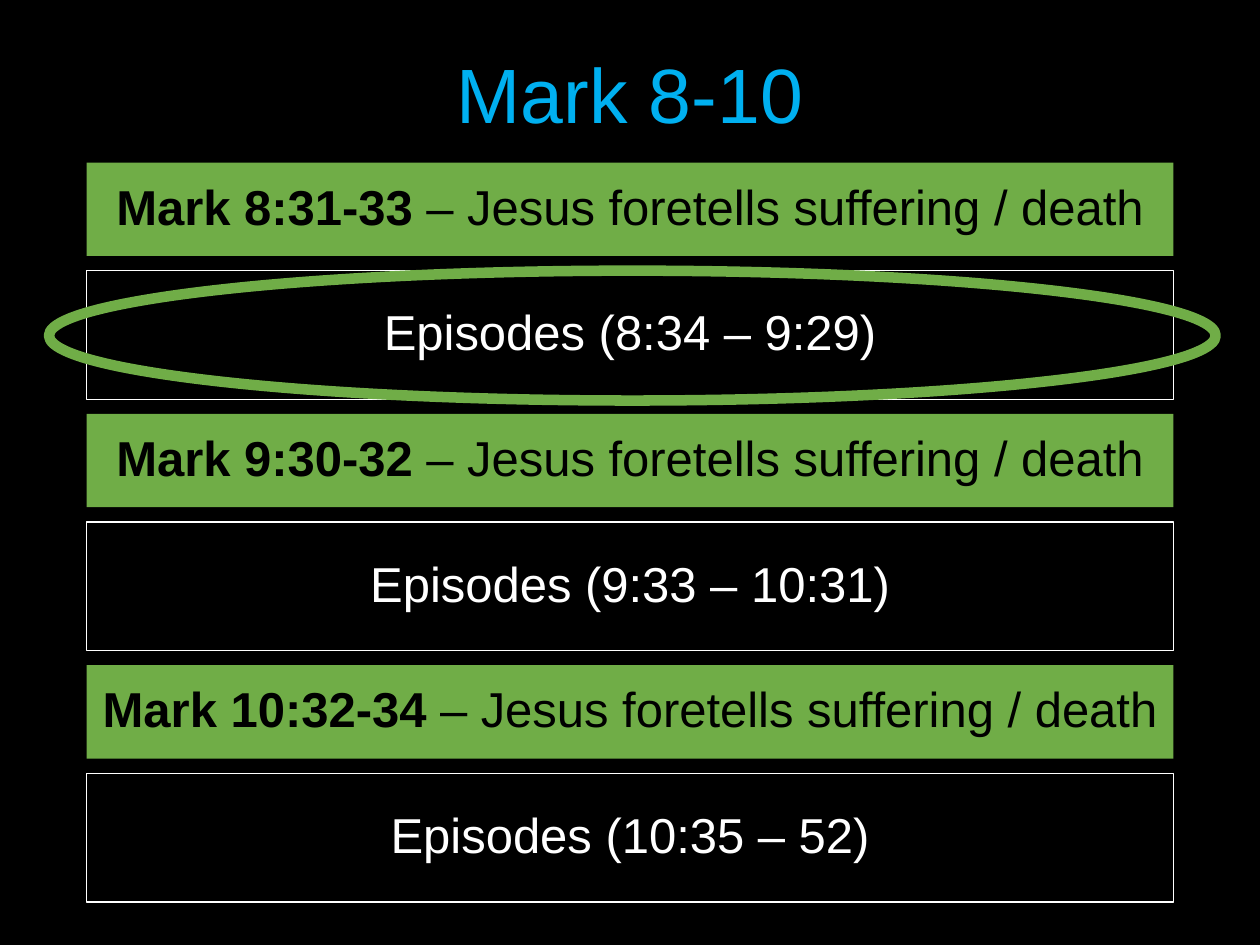
from pptx import Presentation
from pptx.dml.color import RGBColor
from pptx.enum import shapes, text
from pptx.util import Pt

BLACK = RGBColor(0x00, 0x00, 0x00)
WHITE = RGBColor(0xFF, 0xFF, 0xFF)
GREEN = RGBColor(0x70, 0xAD, 0x47)
BLUE = RGBColor(0x00, 0xB0, 0xF0)

LEFT, WIDTH = 49.5, 621
FIRST_TOP, PITCH = 92.9, 143.6
PREDICTION_HEIGHT = 53.4
EPISODES_OFFSET, EPISODES_HEIGHT = 61.8, 73.6

SECTIONS = [
    ("Mark 8:31-33 ", "Episodes (8:34 – 9:29)"),
    ("Mark 9:30-32 ", "Episodes (9:33 – 10:31)"),
    ("Mark 10:32-34 ", "Episodes (10:35 – 52)"),
]
PREDICTION = "– Jesus foretells suffering / death"


def write_centred(shape, parts, size, color):
    frame = shape.text_frame
    frame.word_wrap = True
    frame.auto_size = text.MSO_AUTO_SIZE.NONE
    frame.vertical_anchor = text.MSO_ANCHOR.MIDDLE
    paragraph = frame.paragraphs[0]
    paragraph.alignment = text.PP_ALIGN.CENTER
    paragraph.line_spacing = 0.9
    paragraph.space_before = Pt(0)
    for wording, bold in parts:
        run = paragraph.add_run()
        run.text = wording
        run.font.name = "Arial"
        run.font.size = Pt(size)
        run.font.bold = bold
        run.font.color.rgb = color


def add_figure(slide, kind, left, top, width, height,
               fill=None, line=None, weight=0.75):
    figure = slide.shapes.add_shape(kind, Pt(left), Pt(top), Pt(width), Pt(height))
    figure.shadow.inherit = False
    if fill is None:
        figure.fill.background()
    else:
        figure.fill.solid()
        figure.fill.fore_color.rgb = fill
    if line is None:
        figure.line.fill.background()
    else:
        figure.line.color.rgb = line
        figure.line.width = Pt(weight)
    return figure


def add_title(slide, wording):
    title = slide.shapes.title
    title.left, title.top = Pt(LEFT), Pt(28.8)
    title.width, title.height = Pt(WIDTH), Pt(55.4)
    write_centred(title, [(wording, False)], 44, BLUE)


def add_section(slide, top, reference, episodes):
    rectangle = shapes.MSO_SHAPE.RECTANGLE
    prediction_bar = add_figure(slide, rectangle, LEFT, top, WIDTH,
                                PREDICTION_HEIGHT, fill=GREEN)
    write_centred(prediction_bar, [(reference, True), (PREDICTION, False)], 28, BLACK)
    episodes_box = add_figure(slide, rectangle, LEFT, top + EPISODES_OFFSET, WIDTH,
                              EPISODES_HEIGHT, line=WHITE)
    write_centred(episodes_box, [(episodes, False)], 28, WHITE)


def main():
    deck = Presentation()
    deck.slide_width, deck.slide_height = Pt(720), Pt(540)
    slide = deck.slides.add_slide(deck.slide_layouts[5])
    slide.background.fill.solid()
    slide.background.fill.fore_color.rgb = BLACK

    add_title(slide, "Mark 8-10")
    for index, (reference, episodes) in enumerate(SECTIONS):
        add_section(slide, FIRST_TOP + index * PITCH, reference, episodes)
    add_figure(slide, shapes.MSO_SHAPE.OVAL, 28, FIRST_TOP + EPISODES_OFFSET,
               666.7, 74.2, line=GREEN, weight=6)

    deck.save("out.pptx")


if __name__ == "__main__":
    main()
